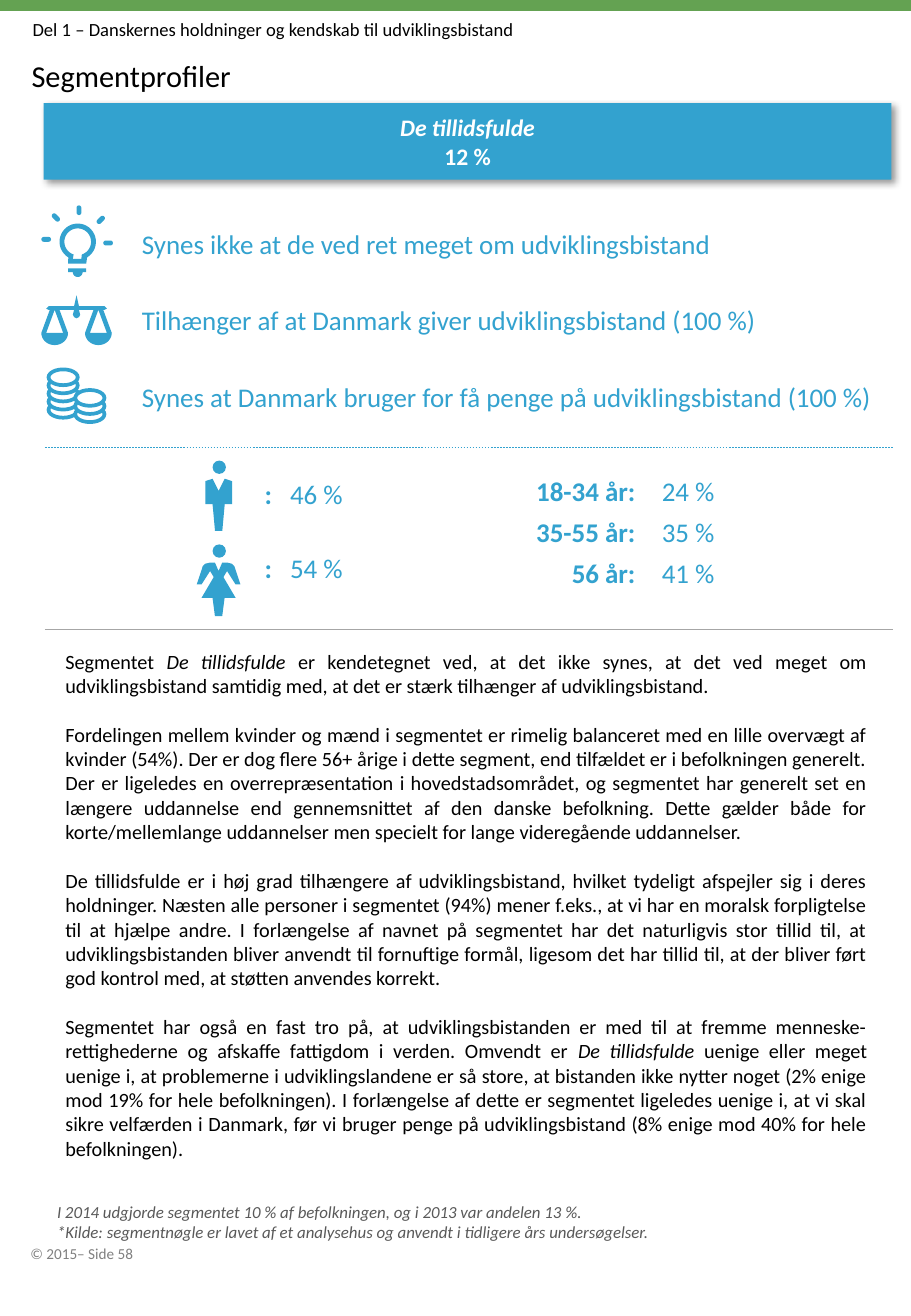
import math
from lxml import etree
from pptx import Presentation
from pptx.dml.color import RGBColor
from pptx.enum.dml import MSO_LINE
from pptx.enum.shapes import MSO_CONNECTOR, MSO_SHAPE
from pptx.enum.text import MSO_ANCHOR, MSO_AUTO_SIZE, PP_ALIGN
from pptx.oxml.ns import qn
from pptx.util import Inches, Pt

RECT, OVAL, ROUNDED = MSO_SHAPE.RECTANGLE, MSO_SHAPE.OVAL, MSO_SHAPE.ROUNDED_RECTANGLE
TOP, MIDDLE = MSO_ANCHOR.TOP, MSO_ANCHOR.MIDDLE
LEFT, CENTER, RIGHT, JUSTIFY = PP_ALIGN.LEFT, PP_ALIGN.CENTER, PP_ALIGN.RIGHT, PP_ALIGN.JUSTIFY

COLORS = {"green": "64A252", "blue": "33A2CF", "black": "000000", "white": "FFFFFF",
          "note": "595959", "footer": "808080", "rule": "A6A6A6"}
FONT = "Calibri"

SECTION = "Del 1 – Danskernes holdninger og kendskab til udviklingsbistand"
TITLE = "Segmentprofiler"
SEGMENT = [[("De tillidsfulde", "bi")], [("12 %", "b")]]
STATEMENTS = [
    "Synes ikke at de ved ret meget om udviklingsbistand",
    "Tilhænger af at Danmark giver udviklingsbistand (100 %)",
    "Synes at Danmark bruger for få penge på udviklingsbistand (100 %)",
]
GENDERS = [("46 %", 3.88), ("54 %", 4.49)]
AGES = [("18-34 år:", "24 %"), ("35-55 år:", "35 %"), ("56 år:", "41 %")]
BODY = [
    [("Segmentet ", ""), ("De tillidsfulde ", "i"),
     ("er kendetegnet ved, at det ikke synes, at det ved meget om udviklingsbistand samtidig med, "
      "at det er stærk tilhænger af udviklingsbistand.", "")],
    [("Fordelingen mellem kvinder og mænd i segmentet er rimelig balanceret med en lille overvægt af "
      "kvinder (54%). Der er dog flere 56+ årige i dette segment, end tilfældet er i befolkningen "
      "generelt. Der er ligeledes en overrepræsentation i hovedstadsområdet, og segmentet har generelt "
      "set en længere uddannelse end gennemsnittet af den danske befolkning. Dette gælder både for "
      "korte/mellemlange uddannelser men specielt for lange videregående uddannelser.", "")],
    [("De tillidsfulde er i høj grad tilhængere af udviklingsbistand, hvilket tydeligt afspejler sig i "
      "deres holdninger. Næsten alle personer i segmentet (94%) mener f.eks., at vi har en moralsk "
      "forpligtelse til at hjælpe andre. I forlængelse af navnet på segmentet har det naturligvis stor "
      "tillid til, at udviklingsbistanden bliver anvendt til fornuftige formål, ligesom det har tillid "
      "til, at der bliver ført god kontrol med, at støtten anvendes korrekt.", "")],
    [("Segmentet har også en fast tro på, at udviklingsbistanden er med til at fremme "
      "menneske-rettighederne og afskaffe fattigdom i verden. Omvendt er ", ""),
     ("De tillidsfulde ", "i"),
     ("uenige eller meget uenige i, at problemerne i udviklingslandene er så store, at bistanden ikke "
      "nytter noget (2% enige mod 19% for hele befolkningen). I forlængelse af dette er segmentet "
      "ligeledes uenige i, at vi skal sikre velfærden i Danmark, før vi bruger penge på "
      "udviklingsbistand (8% enige mod 40% for hele befolkningen).", "")],
]
NOTES = [
    [("I 2014 udgjorde segmentet 10 % af befolkningen, og i 2013 var andelen 13 %.", "i")],
    [("*Kilde: segmentnøgle er lavet af et analysehus og anvendt i tidligere års undersøgelser.", "i")],
]
FOOTER = "© 2015– Side 58"

RAYS = [(0.38, 1.97, 0), (0.46, 1.79, 45), (0.65, 1.73, 90), (0.83, 1.81, -45), (0.89, 2, 0)]
COIN_STACKS = [(0.52, 3.11, 5), (0.74, 3.28, 3)]
MAN_HALF = [(1.8, 4.04), (1.75, 3.94), (1.69, 3.96), (1.69, 4.15), (1.75, 4.15), (1.77, 4.37)]
WOMAN_HALF = [(1.8, 4.7), (1.77, 4.63), (1.73, 4.63), (1.69, 4.64), (1.67, 4.66), (1.62, 4.81),
              (1.66, 4.81), (1.73, 4.7), (1.76, 4.75), (1.66, 4.92), (1.75, 4.92), (1.77, 5.07)]


def color(name):
    return RGBColor.from_string(COLORS[name])


def write(frame, paras, size, ink, align=LEFT, anchor=TOP, gap=0, inset=(0.1, 0.05)):
    frame.word_wrap = True
    frame.auto_size = MSO_AUTO_SIZE.NONE
    frame.vertical_anchor = anchor
    frame.margin_left = frame.margin_right = Inches(inset[0])
    frame.margin_top = frame.margin_bottom = Inches(inset[1])
    for number, spans in enumerate(paras):
        para = frame.add_paragraph() if number else frame.paragraphs[0]
        para.alignment = align
        para.space_before = Pt(gap if number else 0)
        for words, style in spans:
            span = para.add_run()
            span.text = words
            span.font.name, span.font.size = FONT, Pt(size)
            span.font.bold, span.font.italic = "b" in style, "i" in style
            span.font.color.rgb = color(ink)


def add_text(area, paras, size, ink, **layout):
    box = page.shapes.add_textbox(*map(Inches, area))
    write(box.text_frame, paras, size, ink, **layout)
    return box


def paint(shape, fill):
    shape.shadow.inherit = False
    shape.fill.solid()
    shape.fill.fore_color.rgb = color(fill)
    shape.line.fill.background()
    return shape


def add_preset(holder, kind, area, fill="blue"):
    return paint(holder.shapes.add_shape(kind, *map(Inches, area)), fill)


def add_outline(holder, *contours):
    loops = [[(Inches(x), Inches(y)) for x, y in contour] for contour in contours]
    builder = holder.shapes.build_freeform(*loops[0][0])
    for number, loop in enumerate(loops):
        if number:
            builder.move_to(*loop[0])
        builder.add_line_segments(loop[1:], close=True)
    return paint(builder.convert_to_shape(), "blue")


def arc(x, y, rx, ry, start, end, steps=32):
    angles = [math.radians(start + (end - start) * step / steps) for step in range(steps + 1)]
    return [(x + rx * math.cos(angle), y + ry * math.sin(angle)) for angle in angles]


def mirror(points, axis):
    return [(2 * axis - x, y) for x, y in reversed(points)]


def add_rule(y, ink, dash=None):
    rule = page.shapes.add_connector(MSO_CONNECTOR.STRAIGHT, *map(Inches, (0.37, y, 7.35, y)))
    rule.line.color.rgb = color(ink)
    rule.line.width = Pt(0.25)
    if dash:
        rule.line.dash_style = dash
    etree.SubElement(rule._element.spPr, qn("a:effectLst"))


def add_bulb():
    icon = page.shapes.add_group_shape()
    for x, y, angle in RAYS:
        ray = add_preset(icon, ROUNDED, (x - 0.04, y - 0.02, 0.08, 0.04))
        ray.adjustments[0] = 0.5
        ray.rotation = angle
    glass = arc(0.64, 1.99, 0.15, 0.15, 121, 419) + [(0.71, 2.17), (0.56, 2.17)]
    hollow = arc(0.64, 1.99, 0.11, 0.11, 108, 432) + [(0.67, 2.13), (0.6, 2.13)]
    add_outline(icon, glass, hollow)
    add_outline(icon, [(0.56, 2.24), (0.56, 2.21), (0.71, 2.21), (0.71, 2.24)]
                + arc(0.64, 2.24, 0.04, 0.04, 0, 180))


def add_scales():
    axis = 0.63
    half = [(axis, 2.43), (0.61, 2.52), (0.4, 2.52), (0.38, 2.54), (0.4, 2.55), (0.41, 2.55)]
    half += arc(0.45, 2.74, 0.11, 0.1, 180, 0)
    half += [(0.49, 2.55), (0.61, 2.55), (0.6, 2.59), (0.61, 2.61), (axis, 2.62)]
    cord = [(0.38, 2.74), (0.45, 2.55), (0.52, 2.74)]
    add_outline(page, half + mirror(half, axis), cord, mirror(cord, axis))


def add_coins():
    icon = page.shapes.add_group_shape()
    for x, top, count in COIN_STACKS:
        for level in reversed(range(count)):
            y = top + level * 0.067
            coin = add_preset(icon, OVAL, (x - 0.12, y - 0.07, 0.24, 0.13), "white")
            coin.line.color.rgb = color("blue")
            coin.line.width = Pt(2.2)


def add_person(half, head_top):
    icon = page.shapes.add_group_shape()
    add_preset(icon, OVAL, (1.75, head_top, 0.11, 0.11))
    add_outline(icon, half + mirror(half, 1.8))


deck = Presentation()
deck.slide_width, deck.slide_height = Inches(7.5), Inches(10.83)
page = deck.slides.add_slide(deck.slide_layouts[5])

add_preset(page, RECT, (0, 0, 7.5, 0.09), "green")
title = page.shapes.title
title.left, title.top, title.width, title.height = map(Inches, (0.15, 0.41, 7.2, 0.36))
write(title.text_frame, [[(TITLE, "")]], 18, "black", inset=(0.11, 0.06))
add_text((0.17, 0.1, 5.93, 0.29), [[(SECTION, "")]], 11, "black")

banner = add_preset(page, RECT, (0.36, 0.85, 6.98, 0.63))
write(banner.text_frame, SEGMENT, 14, "white", align=CENTER, anchor=MIDDLE)
effects = banner._element.spPr.find(qn("a:effectLst"))
shadow = etree.SubElement(effects, qn("a:outerShdw"), blurRad=str(Pt(4)), dist=str(Pt(3)),
                          dir="2700000", algn="tl", rotWithShape="0")
tint = etree.SubElement(shadow, qn("a:srgbClr"), val=COLORS["black"])
etree.SubElement(tint, qn("a:alpha"), val="40000")

add_bulb()
add_scales()
add_coins()
for row, statement in enumerate(STATEMENTS):
    add_text((1.07, 1.82 + row * 0.63, 6.34, 0.37), [[(statement, "")]], 16, "blue", anchor=MIDDLE)

add_rule(3.68, "blue", MSO_LINE.DASH)
add_person(MAN_HALF, 3.79)
add_person(WOMAN_HALF, 4.48)
for share, y in GENDERS:
    box = add_text((2.08, y, 1.27, 0.37), [[(":\t", "b"), (share, "")]], 16, "blue", anchor=MIDDLE)
    props = box.text_frame.paragraphs[0]._p.get_or_add_pPr()
    tabs = etree.SubElement(props, qn("a:tabLst"))
    etree.SubElement(tabs, qn("a:tab"), pos=str(Inches(0.21)), algn="l")
for row, (age, share) in enumerate(AGES):
    y = 3.77 + row * 0.34
    add_text((4.17, y, 1.16, 0.53), [[(age, "b")]], 16, "blue", align=RIGHT, anchor=MIDDLE)
    add_text((5.35, y, 1.16, 0.53), [[(share, "")]], 16, "blue", anchor=MIDDLE)
add_rule(5.18, "rule")

add_text((0.44, 5.29, 6.8, 4.34), BODY, 12, "black", align=JUSTIFY, gap=14.6)
add_text((0.36, 9.83, 7.1, 0.44), NOTES, 10, "note", inset=(0.11, 0.06))
add_text((0.14, 10.18, 1.19, 0.27), [[(FOOTER, "")]], 9, "footer", inset=(0.11, 0.06))

deck.save("out.pptx")
